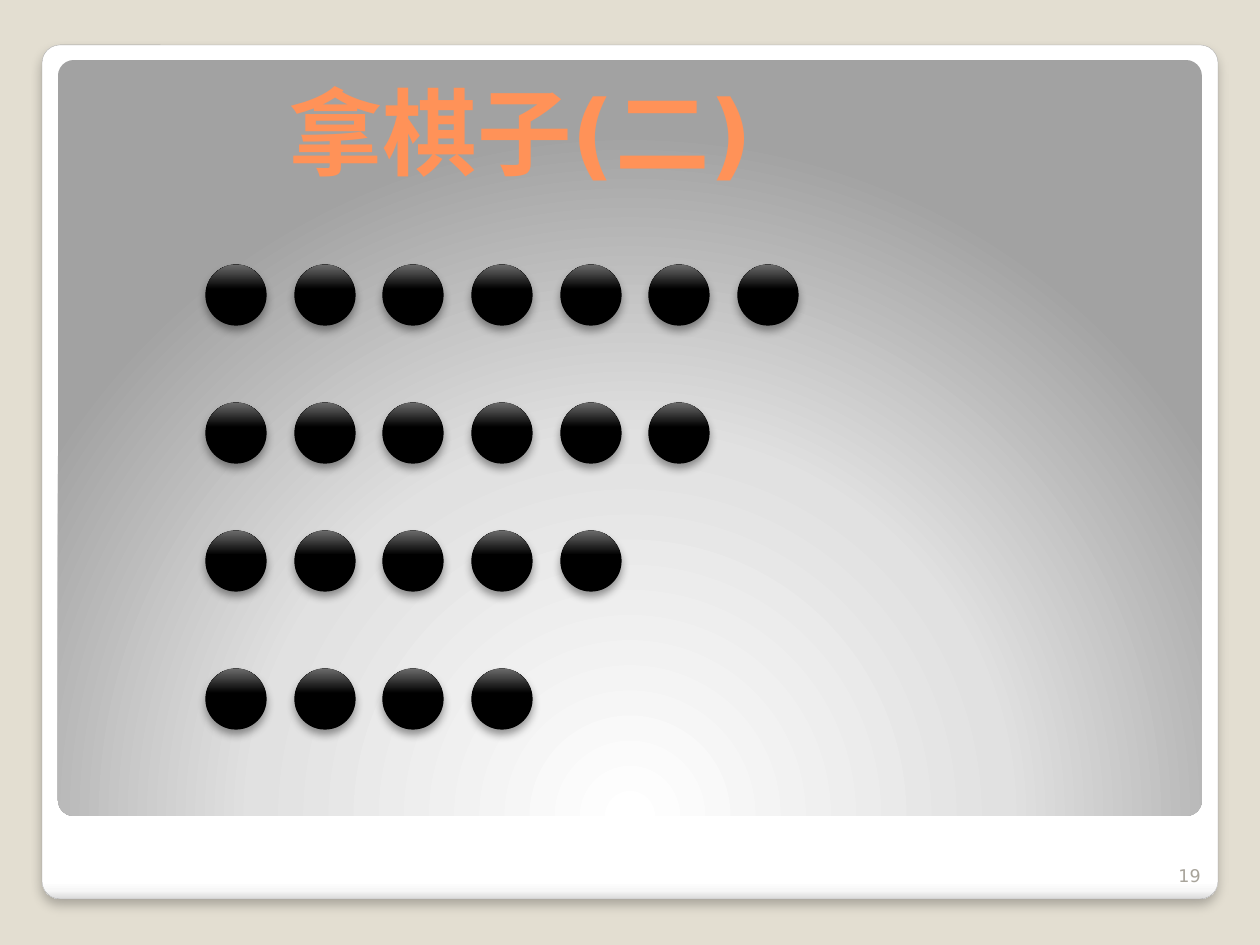
from pptx import Presentation
from pptx.dml.color import RGBColor
from pptx.enum.shapes import MSO_SHAPE as Shape
from pptx.enum.text import MSO_ANCHOR as Anchor, PP_ALIGN as Align
from pptx.oxml import parse_xml
from pptx.oxml.ns import nsdecls, qn
from pptx.util import Emu, Pt

PX = 914400 / 126
FONT = "DejaVu Sans"
PIECES_PER_ROW = {265: 7, 403: 6, 531: 5, 669: 4}  # row top: count
FIRST_LEFT, ROW_WIDTH, PIECE_SIZE = 206, 532, 60   # width spans six steps
UPWARD, DOWNWARD = 270, 90


def px(length):
    return Emu(round(length * PX))


def color(hex_code):
    return RGBColor.from_string(hex_code)


def linear(angle):
    return f'<a:lin ang="{angle * 60000}" scaled="0"/>'


def circular(left, top, right, bottom):
    """Circular gradient direction; the focus is given in percent."""
    return (f'<a:path path="circle"><a:fillToRect l="{left * 1000}" t="{top * 1000}" '
            f'r="{right * 1000}" b="{bottom * 1000}"/></a:path>')


def set_gradient(shape, stops, direction):
    shape.fill.background()
    marks = "".join(f'<a:gs pos="{position * 1000}"><a:srgbClr val="{shade}"/></a:gs>'
                    for position, shade in stops)
    gradient = parse_xml(f'<a:gradFill {nsdecls("a")} rotWithShape="1">'
                         f'<a:gsLst>{marks}</a:gsLst>{direction}</a:gradFill>')
    properties = shape._element.spPr
    properties.replace(properties.find(qn("a:noFill")), gradient)


def add_shadow(shape, alpha, blur, distance):
    """Black shadow falling straight down, with lengths in points."""
    effects = shape._element.spPr.find(qn("a:effectLst"))
    effects.append(parse_xml(
        f'<a:outerShdw {nsdecls("a")} blurRad="{Pt(blur)}" dist="{Pt(distance)}" '
        f'dir="5400000" algn="t" rotWithShape="0"><a:srgbClr val="000000">'
        f'<a:alpha val="{alpha * 1000}"/></a:srgbClr></a:outerShdw>'))


class Board:
    """Holds the slide and the look of the game board."""
    backdrop = "E3DED1"
    card = [(0, "FFFFFF"), (98, "FFFFFF"), (99, "F7F7F7"), (100, "DADADA")]
    panel = [(0, "FFFFFF"), (55, "E1E1E1"), (100, "A2A2A2")]
    piece_gloss = [(0, "000000"), (60, "000000"), (100, "696969")]

    def __init__(self, slide):
        self.slide = slide
        slide.background.fill.solid()
        slide.background.fill.fore_color.rgb = color(self.backdrop)

    def shape(self, kind, box, fill=None, line=None, line_width=0.75):
        shape = self.slide.shapes.add_shape(kind, *map(px, box))
        shape.shadow.inherit = False
        if fill:
            shape.fill.solid()
            shape.fill.fore_color.rgb = color(fill)
        if line:
            shape.line.color.rgb = color(line)
            shape.line.width = Pt(line_width)
        else:
            shape.line.fill.background()
        return shape

    def rounded(self, box, stops, direction, **outline):
        frame = self.shape(Shape.ROUNDED_RECTANGLE, box, **outline)
        frame.adjustments[0] = 0.021
        set_gradient(frame, stops, direction)
        return frame

    def piece(self, left, top):
        box = left, top, PIECE_SIZE, PIECE_SIZE
        self.shape(Shape.OVAL, box, fill="BFBFBF", line="000000")
        gloss = self.shape(Shape.OVAL, box)
        set_gradient(gloss, self.piece_gloss, linear(UPWARD))
        add_shadow(gloss, alpha=40, blur=5.2, distance=3)

    def text(self, words, box, size, shade, bold=False, align=Align.LEFT):
        frame = self.slide.shapes.add_textbox(*map(px, box)).text_frame
        frame.word_wrap = True
        frame.vertical_anchor = Anchor.BOTTOM
        paragraph = frame.paragraphs[0]
        paragraph.alignment = align
        run = paragraph.add_run()
        run.text = words
        run.font.name = FONT
        run.font.size = Pt(size)
        run.font.bold = bold
        run.font.color.rgb = color(shade)


def main():
    deck = Presentation()
    deck.slide_width, deck.slide_height = px(1260), px(945)
    board = Board(deck.slides.add_slide(deck.slide_layouts[6]))

    card = board.rounded((42, 45, 1176, 854), board.card, linear(DOWNWARD),
                         line="A4A4A4", line_width=0.16)
    add_shadow(card, alpha=25, blur=6, distance=4)
    board.rounded((58, 60, 1144, 756), board.panel, circular(50, 175, 50, -75))

    board.text("拿棋子(二)", (276, 49, 931, 145), 54, "FF9258", bold=True)
    board.text("19", (1150, 842, 63, 50), 10, "A8A49B", align=Align.RIGHT)

    for top, count in PIECES_PER_ROW.items():
        for column in range(count):
            board.piece(FIRST_LEFT + round(column * ROW_WIDTH / 6), top)

    deck.save("out.pptx")


if __name__ == "__main__":
    main()
